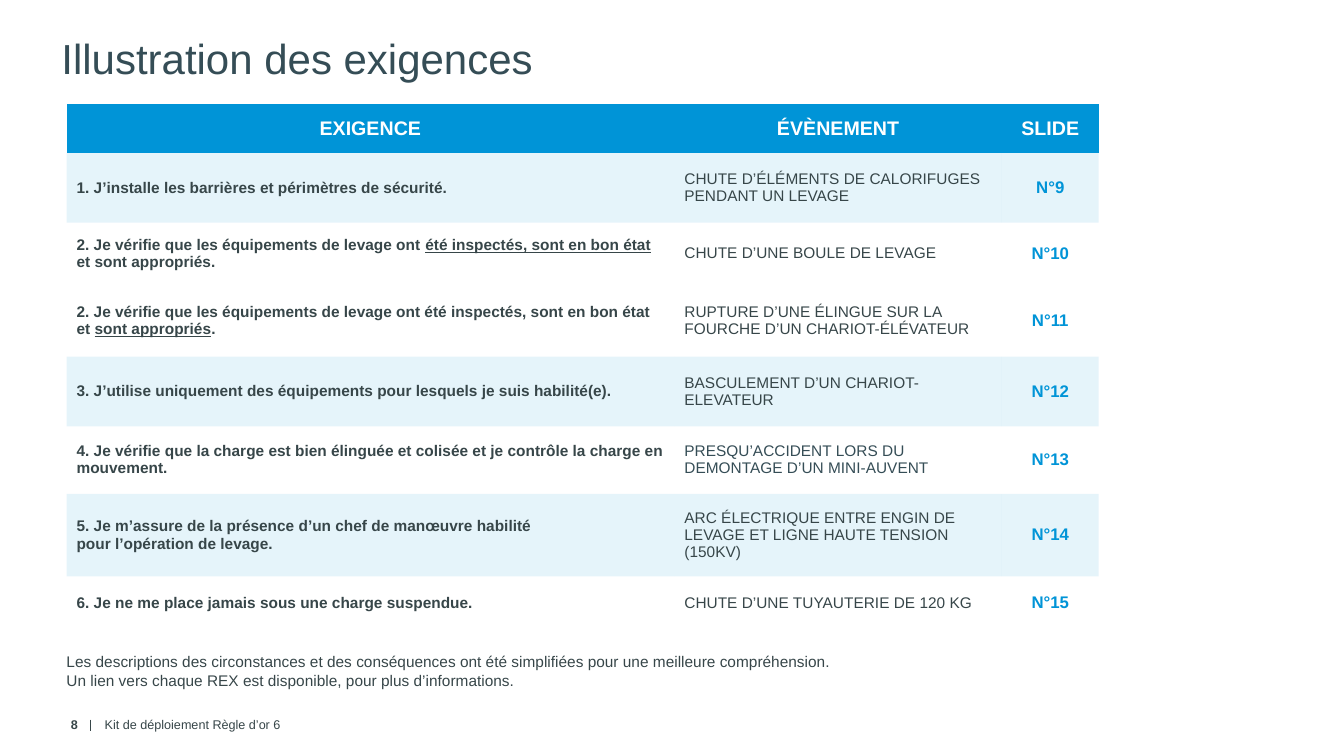
from dataclasses import dataclass

from lxml.etree import SubElement
from pptx import Presentation
from pptx.dml.color import RGBColor
from pptx.enum.shapes import MSO_CONNECTOR
from pptx.enum.text import MSO_ANCHOR, MSO_AUTO_SIZE, PP_ALIGN
from pptx.oxml.ns import qn
from pptx.slide import Slide
from pptx.table import _Cell
from pptx.text.text import TextFrame
from pptx.util import Pt

BLUE, WHITE, GREY, SLATE = "0094D7", "FFFFFF", "374649", "354D56"
NO_GRID_STYLE = "{2D5ABB26-0587-4C30-8999-92F81FD0307C}"


@dataclass(frozen=True)
class TextStyle:
    size: float
    color: str = GREY
    bold: bool = False
    align: PP_ALIGN = PP_ALIGN.LEFT
    line_spacing: float = 1.0


@dataclass(frozen=True)
class Requirement:
    """One table row; underscores in the rule enclose underlined words."""
    rule: str
    event: str
    slide_number: int
    height: float
    fill: str = WHITE
    opacity: int = 10
    event_color: str = GREY


@dataclass(frozen=True)
class Note:
    text: str
    left: float
    top: float
    width: float
    height: float
    style: TextStyle
    frame_format: dict


HEADER_STYLE = TextStyle(14, WHITE, True, PP_ALIGN.CENTER)
RULE_STYLE = TextStyle(11, bold=True)
NUMBER_STYLE = TextStyle(12, BLUE, True, PP_ALIGN.CENTER)
TITLE_STYLE = TextStyle(30, SLATE)

HEADINGS = ("EXIGENCE", "ÉVÈNEMENT", "SLIDE")
HEADER_HEIGHT = 35.28
COLUMN_WIDTHS = (434.16, 234, 69.12)

REQUIREMENTS = (
    Requirement("1. J’installe les barrières et périmètres de sécurité.",
                "CHUTE D’ÉLÉMENTS DE CALORIFUGES PENDANT UN LEVAGE", 9, 49.68, BLUE),
    Requirement("2. Je vérifie que les équipements de levage ont "
                "_été inspectés, sont en bon état _et sont appropriés.",
                "CHUTE D’UNE BOULE DE LEVAGE", 10, 43.92, opacity=100),
    Requirement("2. Je vérifie que les équipements de levage ont été inspectés, "
                "sont en bon état et _sont appropriés_.",
                "RUPTURE D’UNE ÉLINGUE SUR LA FOURCHE D’UN CHARIOT-ÉLÉVATEUR", 11, 51.84),
    Requirement("3. J’utilise uniquement des équipements pour lesquels je suis habilité(e).",
                "BASCULEMENT D’UN CHARIOT-ELEVATEUR", 12, 49.68, BLUE),
    Requirement("4. Je vérifie que la charge est bien élinguée et colisée "
                "et je contrôle la charge en mouvement.",
                "PRESQU’ACCIDENT LORS DU DEMONTAGE D’UN MINI-AUVENT", 13, 48.24,
                event_color=SLATE),
    Requirement("5. Je m’assure de la présence d’un chef de manœuvre habilité\n"
                "pour l’opération de levage.",
                "ARC ÉLECTRIQUE ENTRE ENGIN DE LEVAGE ET LIGNE HAUTE TENSION (150KV)",
                14, 59.04, BLUE),
    Requirement("6. Je ne me place jamais sous une charge suspendue.",
                "CHUTE D’UNE TUYAUTERIE DE 120 KG", 15, 38.16),
)

FOOTER_FORMAT = {"vertical_anchor": MSO_ANCHOR.MIDDLE}
DISCLAIMER_FORMAT = {"margin_left": 0, "margin_top": 0, "margin_right": 0,
                     "margin_bottom": 0, "auto_size": MSO_AUTO_SIZE.SHAPE_TO_FIT_TEXT}
NOTES = (
    Note("Kit de déploiement Règle d’or 6", 67.68, 507.6, 283.68, 20.16,
         TextStyle(9), FOOTER_FORMAT),
    Note("8", 17.28, 507.6, 45.36, 20.16,
         TextStyle(9, bold=True, align=PP_ALIGN.RIGHT), FOOTER_FORMAT),
    Note("Les descriptions des circonstances et des conséquences ont été simplifiées "
         "pour une meilleure compréhension.\v"
         "Un lien vers chaque REX est disponible, pour plus d’informations.",
         47.52, 465.12, 765.36, 26.64, TextStyle(11, line_spacing=1.05), DISCLAIMER_FORMAT),
)


def rgb(color: str) -> RGBColor:
    return RGBColor.from_string(color)


def apply_format(target: object, values: dict) -> None:
    for name, value in values.items():
        setattr(target, name, value)


def write_text(frame: TextFrame, text: str, style: TextStyle) -> None:
    """Split paragraphs at newlines, lines at vertical tabs, underlining at underscores."""
    for paragraph_index, paragraph_text in enumerate(text.split("\n")):
        paragraph = frame.add_paragraph() if paragraph_index else frame.paragraphs[0]
        apply_format(paragraph, {"alignment": style.align, "line_spacing": style.line_spacing})
        for line_index, line in enumerate(paragraph_text.split("\v")):
            if line_index:
                paragraph.add_line_break()
            for part_index, part in enumerate(line.split("_")):
                run = paragraph.add_run()
                run.text = part
                apply_format(run.font, {"name": "Arial", "size": Pt(style.size),
                                        "bold": style.bold, "underline": part_index % 2 == 1})
                run.font.color.rgb = rgb(style.color)


def fill_cell(cell: _Cell, text: str, style: TextStyle, fill: str, opacity: int) -> None:
    cell.vertical_anchor = MSO_ANCHOR.MIDDLE
    write_text(cell.text_frame, text, style)
    cell.fill.solid()
    cell.fill.fore_color.rgb = rgb(fill)
    if opacity < 100:
        fill_color = cell._tc.tcPr.find(f".//{qn('a:srgbClr')}")
        SubElement(fill_color, qn("a:alpha"), val=str(opacity * 1000))


def add_requirements_table(slide: Slide) -> None:
    heights = (HEADER_HEIGHT, *(item.height for item in REQUIREMENTS))
    table = slide.shapes.add_table(
        len(heights), len(COLUMN_WIDTHS), Pt(47.52), Pt(74.16),
        Pt(sum(COLUMN_WIDTHS)), Pt(sum(heights))).table
    table.horz_banding = False
    table._tbl.tblPr.find(qn("a:tableStyleId")).text = NO_GRID_STYLE
    for column, width in zip(table.columns, COLUMN_WIDTHS):
        column.width = Pt(width)
    for row, height in zip(table.rows, heights):
        row.height = Pt(height)
    for column_index, heading in enumerate(HEADINGS):
        fill_cell(table.cell(0, column_index), heading, HEADER_STYLE, BLUE, 100)
    for row_index, item in enumerate(REQUIREMENTS, start=1):
        contents = ((item.rule, RULE_STYLE),
                    (item.event, TextStyle(11, item.event_color)),
                    (f"N°{item.slide_number}", NUMBER_STYLE))
        for column_index, (text, style) in enumerate(contents):
            fill_cell(table.cell(row_index, column_index), text, style, item.fill, item.opacity)


def add_note(slide: Slide, note: Note) -> None:
    frame = slide.shapes.add_textbox(
        Pt(note.left), Pt(note.top), Pt(note.width), Pt(note.height)).text_frame
    apply_format(frame, {"word_wrap": True, **note.frame_format})
    write_text(frame, note.text, note.style)


def add_footer_divider(slide: Slide) -> None:
    divider = slide.shapes.add_connector(
        MSO_CONNECTOR.STRAIGHT, Pt(64.8), Pt(514.08), Pt(64.8), Pt(522))
    divider.line.color.rgb = rgb(GREY)
    divider.line.width = Pt(1)
    SubElement(divider._element.spPr, qn("a:effectLst"))


def place_title(slide: Slide) -> None:
    title = slide.shapes.title
    apply_format(title, {"left": Pt(36.72), "top": Pt(19.44),
                         "width": Pt(765.36), "height": Pt(79.2)})
    apply_format(title.text_frame, {"vertical_anchor": MSO_ANCHOR.TOP, "word_wrap": True,
                                    "auto_size": MSO_AUTO_SIZE.NONE})
    write_text(title.text_frame, "Illustration des exigences", TITLE_STYLE)


def main() -> None:
    presentation = Presentation()
    apply_format(presentation, {"slide_width": Pt(960), "slide_height": Pt(540)})
    slide = presentation.slides.add_slide(presentation.slide_layouts[5])
    place_title(slide)
    add_footer_divider(slide)
    add_requirements_table(slide)
    for note in NOTES:
        add_note(slide, note)
    presentation.save("out.pptx")


if __name__ == "__main__":
    main()
